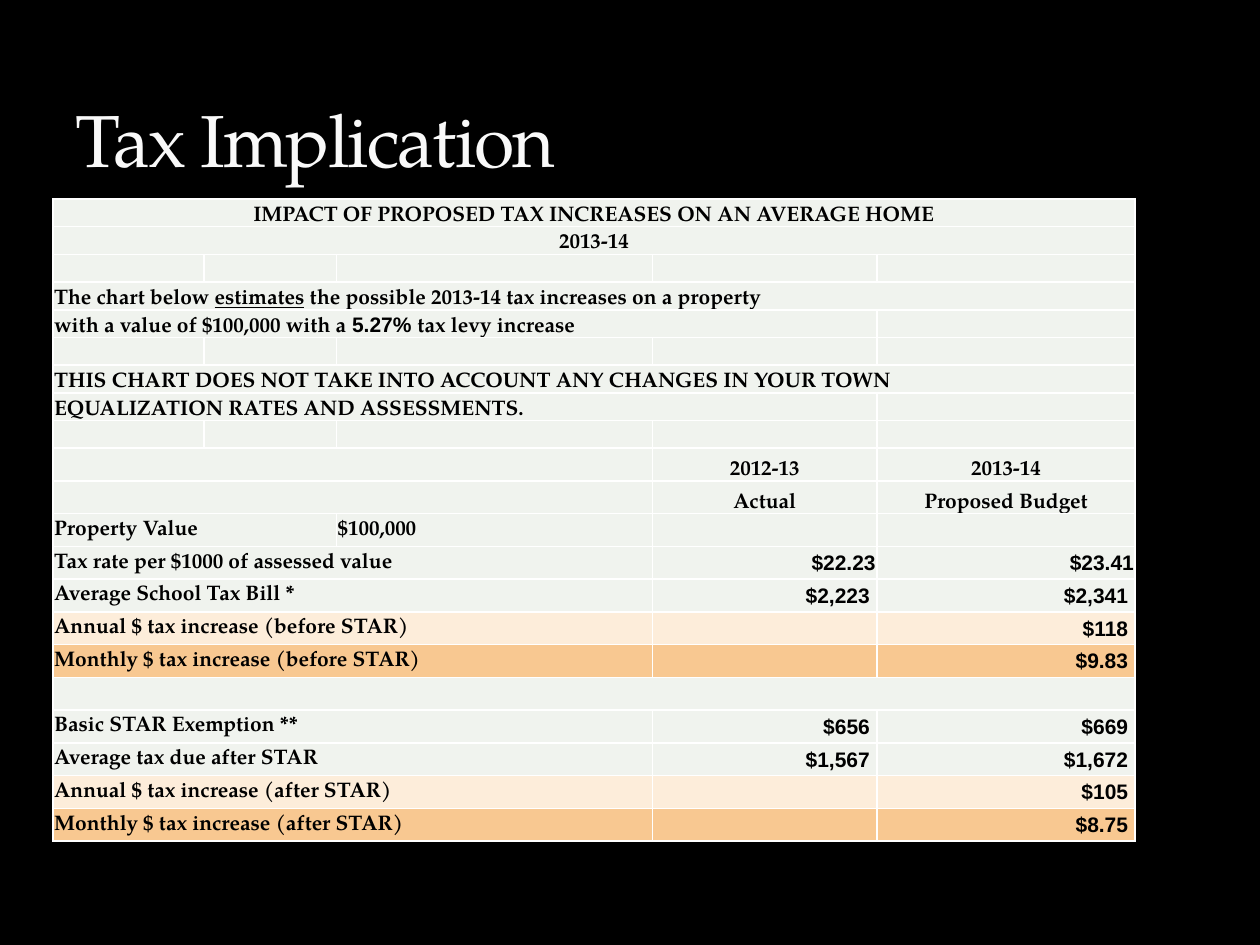
from dataclasses import dataclass

from lxml import etree
from pptx import Presentation
from pptx.dml.color import RGBColor
from pptx.enum import text
from pptx.oxml import ns
from pptx.util import Inches, Pt

SERIF, SANS = "TeX Gyre Pagella", "Arial"
PALE, PEACH, ORANGE = "F0F3EE", "FDEDDA", "F8C891"
BLACK, WHITE, TITLE_COLOR = "000000", "FFFFFF", "F9F9F9"
LEFT, CENTER, RIGHT = text.PP_ALIGN.LEFT, text.PP_ALIGN.CENTER, text.PP_ALIGN.RIGHT
BOTTOM, MIDDLE = text.MSO_ANCHOR.BOTTOM, text.MSO_ANCHOR.MIDDLE
COLUMN_WIDTHS = (1.2, 1.05, 2.51, 1.78, 2.05)
NOTE_HEIGHT, FIGURE_HEIGHT = 0.22, 0.26


@dataclass(frozen=True)
class Run:
    words: str
    font: str = SERIF
    underline: bool = False


@dataclass(frozen=True)
class Cell:
    runs: tuple[Run, ...] = ()
    span: int = 1
    align: text.PP_ALIGN = LEFT


@dataclass(frozen=True)
class Row:
    cells: tuple[Cell, ...]
    height: float = FIGURE_HEIGHT
    anchor: text.MSO_ANCHOR = MIDDLE
    fill: str = PALE


EMPTY = Cell()


def label(words: str, span: int = 1, align: text.PP_ALIGN = LEFT) -> Cell:
    return Cell((Run(words),), span, align)


def amount(words: str) -> Cell:
    return Cell((Run(words, SANS),), align=RIGHT) if words else EMPTY


def note(*cells: Cell) -> Row:
    return Row(cells, NOTE_HEIGHT, BOTTOM)


def heading(actual: str, proposed: str) -> Row:
    cells = (Cell(span=3), label(actual, align=CENTER), label(proposed, align=CENTER))
    return Row(cells, anchor=BOTTOM)


def figures(name: str, actual: str, proposed: str, fill: str = PALE) -> Row:
    return Row((label(name, 3), amount(actual), amount(proposed)), fill=fill)


BLANK_NOTE = note(*[EMPTY] * 5)
ROWS = (
    note(label("IMPACT OF PROPOSED TAX INCREASES ON AN AVERAGE HOME", 5, CENTER)),
    note(label("2013-14", 5, CENTER)),
    BLANK_NOTE,
    note(Cell((Run("The chart below "), Run("estimates", underline=True),
               Run(" the possible 2013-14 tax increases on a property")), 5)),
    note(Cell((Run("with a value of $100,000 with a "), Run("5.27% ", SANS),
               Run("tax levy increase")), 4), EMPTY),
    BLANK_NOTE,
    note(label("THIS CHART DOES NOT TAKE INTO ACCOUNT ANY CHANGES IN YOUR TOWN", 5)),
    note(label("EQUALIZATION RATES AND ASSESSMENTS.", 4), EMPTY),
    BLANK_NOTE,
    heading("2012-13", "2013-14"),
    heading("Actual", "Proposed Budget"),
    Row((label("Property Value", 2), label("$100,000"), EMPTY, EMPTY)),
    figures("Tax rate per $1000 of assessed value", "$22.23", "$23.41"),
    figures("Average School Tax Bill *", "$2,223 ", "$2,341 "),
    figures("Annual $ tax increase (before STAR)", "", "$118 ", PEACH),
    figures("Monthly $ tax increase (before STAR)", "", "$9.83 ", ORANGE),
    Row((Cell(span=5),)),
    figures("Basic STAR Exemption **", "$656 ", "$669 "),
    figures("Average tax due after STAR", "$1,567 ", "$1,672 "),
    figures("Annual $ tax increase (after STAR)", "", "$105 ", PEACH),
    figures("Monthly $ tax increase (after STAR)", "", "$8.75 ", ORANGE),
)


def paint(color_owner, color: str) -> None:
    """Give a fill a solid colour."""
    color_owner.solid()
    color_owner.fore_color.rgb = RGBColor.from_string(color)


def format_font(font, name: str, size: float, color: str, bold: bool = False) -> None:
    font.name, font.size, font.bold = name, Pt(size), bold
    paint(font.fill, color)


def add_borders(cell) -> None:
    properties = cell._tc.get_or_add_tcPr()
    for side in ("lnL", "lnR", "lnT", "lnB"):
        line = etree.SubElement(properties, ns.qn(f"a:{side}"), w=str(Pt(1)))
        fill = etree.SubElement(line, ns.qn("a:solidFill"))
        etree.SubElement(fill, ns.qn("a:srgbClr"), val=WHITE)


def format_cell(cell, row: Row) -> None:
    add_borders(cell)
    paint(cell.fill, row.fill)
    cell.margin_left = cell.margin_right = cell.margin_top = Inches(0.01)
    cell.margin_bottom = 0
    cell.vertical_anchor = row.anchor


def write_cell(cell, content: Cell) -> None:
    paragraph = cell.text_frame.paragraphs[0]
    paragraph.alignment = content.align
    for part in content.runs:
        run = paragraph.add_run()
        run.text = part.words
        format_font(run.font, part.font, 12, BLACK, bold=True)
        if part.underline:
            run.font.underline = True
    if not content.runs:
        # The size of an empty paragraph keeps its row from growing.
        etree.SubElement(paragraph._p, ns.qn("a:endParaRPr"), sz="1200")


def add_title(slide) -> None:
    title = slide.shapes.title
    title.left, title.top = Inches(0.5), Inches(0.17)
    title.width, title.height = Inches(9), Inches(1.33)
    frame = title.text_frame
    frame.auto_size = text.MSO_AUTO_SIZE.NONE
    frame.vertical_anchor = BOTTOM
    paragraph = frame.paragraphs[0]
    paragraph.alignment = LEFT
    run = paragraph.add_run()
    run.text = "Tax Implication"
    format_font(run.font, SERIF, 42, TITLE_COLOR)
    run._r.get_or_add_rPr().set("spc", "-100")


def add_tax_table(slide) -> None:
    height = sum(row.height for row in ROWS)
    table = slide.shapes.add_table(
        len(ROWS), len(COLUMN_WIDTHS), Inches(0.42), Inches(1.58),
        Inches(sum(COLUMN_WIDTHS)), Inches(height)).table
    table.first_row = table.horz_banding = False
    for column, width in zip(table.columns, COLUMN_WIDTHS):
        column.width = Inches(width)
    for index, row in enumerate(ROWS):
        table.rows[index].height = Inches(row.height)
        for cell in table.rows[index].cells:
            format_cell(cell, row)
        start = 0
        for content in row.cells:
            cell = table.cell(index, start)
            if content.span > 1:
                cell.merge(table.cell(index, start + content.span - 1))
            write_cell(cell, content)
            start += content.span


def main() -> None:
    presentation = Presentation()
    presentation.slide_width, presentation.slide_height = Inches(10), Inches(7.5)
    slide = presentation.slides.add_slide(presentation.slide_layouts[5])
    paint(slide.background.fill, BLACK)
    add_title(slide)
    add_tax_table(slide)
    presentation.save("out.pptx")


if __name__ == "__main__":
    main()
